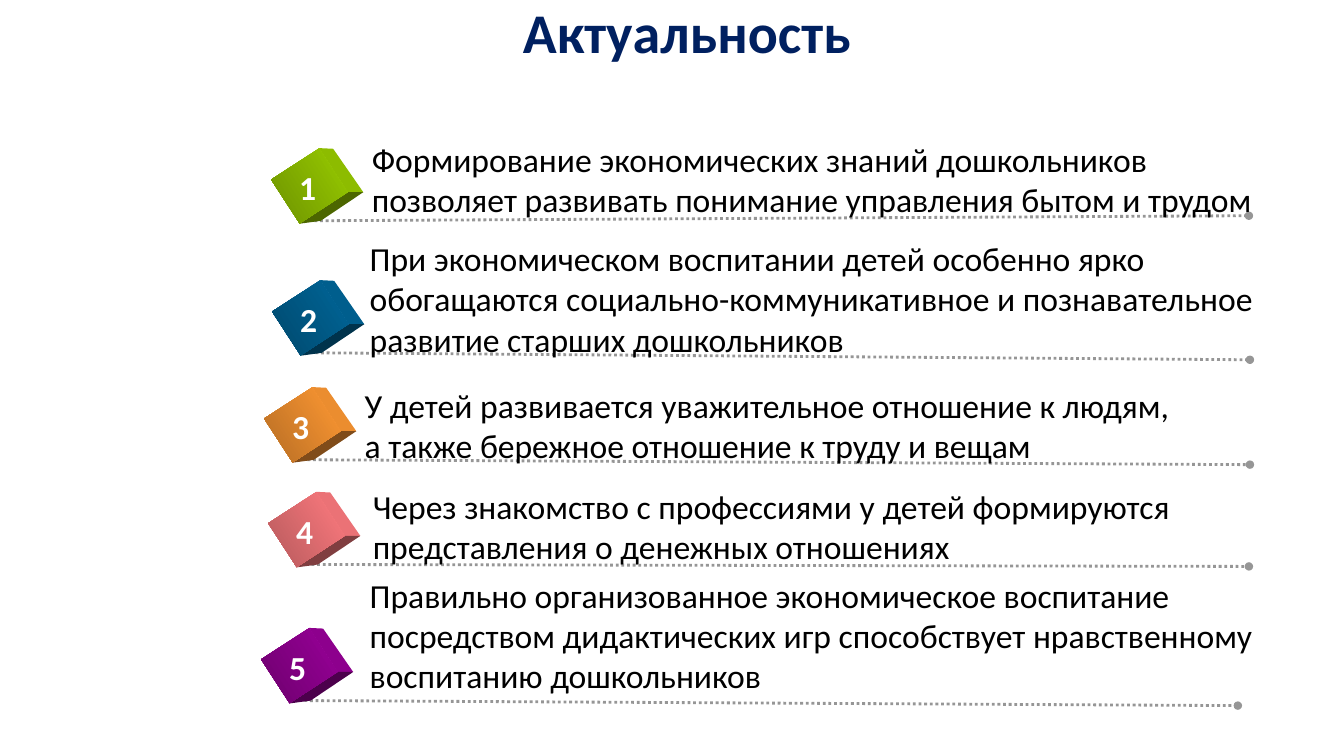
from dataclasses import dataclass

from lxml import etree
from pptx import Presentation
from pptx.dml.color import RGBColor
from pptx.enum.dml import MSO_LINE
from pptx.enum.shapes import MSO_CONNECTOR, MSO_SHAPE
from pptx.enum.text import MSO_ANCHOR, MSO_AUTO_SIZE, PP_ALIGN
from pptx.oxml.ns import qn
from pptx.shapes.autoshape import Shape
from pptx.slide import Slide
from pptx.util import Pt

STRAIGHT = MSO_CONNECTOR.STRAIGHT
RECTANGLE = MSO_SHAPE.RECTANGLE
DOTTED = MSO_LINE.ROUND_DOT
CENTER = PP_ALIGN.CENTER
TOP = MSO_ANCHOR.TOP
GROW = MSO_AUTO_SIZE.SHAPE_TO_FIT_TEXT

FONT = "Calibri"
CUBE_WIDTH, CUBE_HEIGHT, CUBE_TURN = 37.4, 41, 57
LINE_HEIGHT, TEXT_PADDING = 29, 7.2

# Cube corners, in points from the centre of the front face
TOP_FRONT, TOP_BACK = (7, -27), (17, -26.5)
RIGHT_FRONT, RIGHT_BACK = (27.4, 4.5), (38.5, 4.5)
BOTTOM_FRONT, BOTTOM_BACK = (-7, 27), (8, 25)
SIDE_FACE = (TOP_FRONT, TOP_BACK, RIGHT_BACK, RIGHT_FRONT)
UNDER_FACE = (BOTTOM_FRONT, RIGHT_FRONT, RIGHT_BACK, BOTTOM_BACK)

Point = tuple[float, float]


@dataclass(frozen=True)
class Reason:
    cube: Point
    light: str
    dark: str
    text: Point
    text_width: float
    rule_end: Point
    lines: tuple[str, ...]


REASONS = (
    Reason((202.3, 112.3), "99CC00", "6D9200", (258.5, 95.8), 648.7, (892.1, 154.1),
           ("Формирование экономических знаний дошкольников",
            "позволяет развивать понимание управления бытом и трудом")),
    Reason((203, 206.6), "006699", "00496D", (257, 166.3), 657.4, (892.8, 257),
           ("При экономическом воспитании детей особенно ярко",
            "обогащаются социально-коммуникативное и познавательное",
            "развитие старших дошкольников")),
    Reason((197.3, 283), "FF9933", "B66D24", (253.4, 271.4), 600.5, (892.8, 331.9),
           ("У детей развивается уважительное отношение к людям,",
            "а также бережное отношение к труду и вещам")),
    Reason((200.2, 357.8), "FF7C80", "B6595C", (259.2, 343.4), 594.7, (892.1, 404.6),
           ("Через знакомство с профессиями у детей формируются",
            "представления о денежных отношениях")),
    Reason((195.1, 455), "990099", "6D006D", (257, 406.8), 656.6, (884.2, 504),
           ("Правильно организованное экономическое воспитание",
            "посредством дидактических игр способствует нравственному",
            "воспитанию дошкольников")),
)


def rgb(color: str) -> RGBColor:
    return RGBColor.from_string(color)


def shade(color: str, share: float) -> str:
    """Darken a colour to the given share of its brightness."""
    channels = (int(color[i:i + 2], 16) for i in (0, 2, 4))
    return "".join(f"{round(channel * share):02X}" for channel in channels)


def add_text(slide: Slide, at: Point, size: Point, lines: tuple[str, ...],
             color: str, points: float = 24, bold: bool = False) -> Shape:
    box = slide.shapes.add_textbox(*map(Pt, at + size))
    frame = box.text_frame
    frame.word_wrap = False
    frame.auto_size = GROW
    frame.vertical_anchor = TOP
    for index, line in enumerate(lines):
        paragraph = frame.paragraphs[0] if index == 0 else frame.add_paragraph()
        run = paragraph.add_run()
        run.text = line
        run.font.name = FONT
        run.font.size = Pt(points)
        run.font.bold = bold
        run.font.color.rgb = rgb(color)
    return box


def add_rule(slide: Slide, start: Point, end: Point) -> None:
    """Draw a dotted line that ends in a dot."""
    rule = slide.shapes.add_connector(STRAIGHT, *map(Pt, start + end))
    rule.line.color.rgb = rgb("969696")
    rule.line.width = Pt(2)
    rule.line.dash_style = DOTTED
    properties = rule.line._get_or_add_ln()
    etree.SubElement(properties, qn("a:tailEnd"), type="oval")
    etree.SubElement(rule._element.spPr, qn("a:effectLst"))


def add_face(slide: Slide, center: Point, corners: tuple[Point, ...], color: str) -> None:
    outline = [(Pt(center[0] + x), Pt(center[1] + y)) for x, y in corners]
    builder = slide.shapes.build_freeform(*outline[0])
    builder.add_line_segments(outline[1:], close=True)
    face = builder.convert_to_shape()
    face.shadow.inherit = False
    face.fill.solid()
    face.fill.fore_color.rgb = rgb(color)
    face.line.fill.background()


def add_cube(slide: Slide, at: Point, light: str, dark: str) -> None:
    center = (at[0] + CUBE_WIDTH / 2, at[1] + CUBE_HEIGHT / 2)
    add_face(slide, center, SIDE_FACE, shade(light, 0.92))
    add_face(slide, center, UNDER_FACE, shade(light, 0.5))
    front = slide.shapes.add_shape(RECTANGLE, *map(Pt, at + (CUBE_WIDTH, CUBE_HEIGHT)))
    front.rotation = CUBE_TURN
    front.shadow.inherit = False
    front.line.fill.background()
    front.fill.gradient()
    front.fill.gradient_angle = 270
    for stop, color, position in zip(front.fill.gradient_stops, (light, dark), (0, 1)):
        stop.color.rgb = rgb(color)
        stop.position = position


def add_reason(slide: Slide, number: int, reason: Reason) -> None:
    x, y = reason.cube
    add_rule(slide, (x + 22.3, y + 45.4), reason.rule_end)
    add_cube(slide, reason.cube, reason.light, reason.dark)
    height = len(reason.lines) * LINE_HEIGHT + TEXT_PADDING
    add_text(slide, reason.text, (reason.text_width, height), reason.lines, "000000")
    add_text(slide, (x + 4.3, y + 3.6), (28, 36), (str(number),), "FFFFFF", bold=True)


def main() -> None:
    presentation = Presentation()
    presentation.slide_width, presentation.slide_height = Pt(960), Pt(540)
    slide = presentation.slides.add_slide(presentation.slide_layouts[6])
    for number, reason in enumerate(REASONS, start=1):
        add_reason(slide, number, reason)
    title = add_text(slide, (21.6, 0), (938.2, 87), ("Актуальность",), "002060", 40, True)
    title.text_frame.word_wrap = True
    title.text_frame.auto_size = MSO_AUTO_SIZE.NONE
    heading = title.text_frame.paragraphs[0]
    heading.alignment = CENTER
    heading.line_spacing = 0.9
    presentation.save("out.pptx")


if __name__ == "__main__":
    main()
